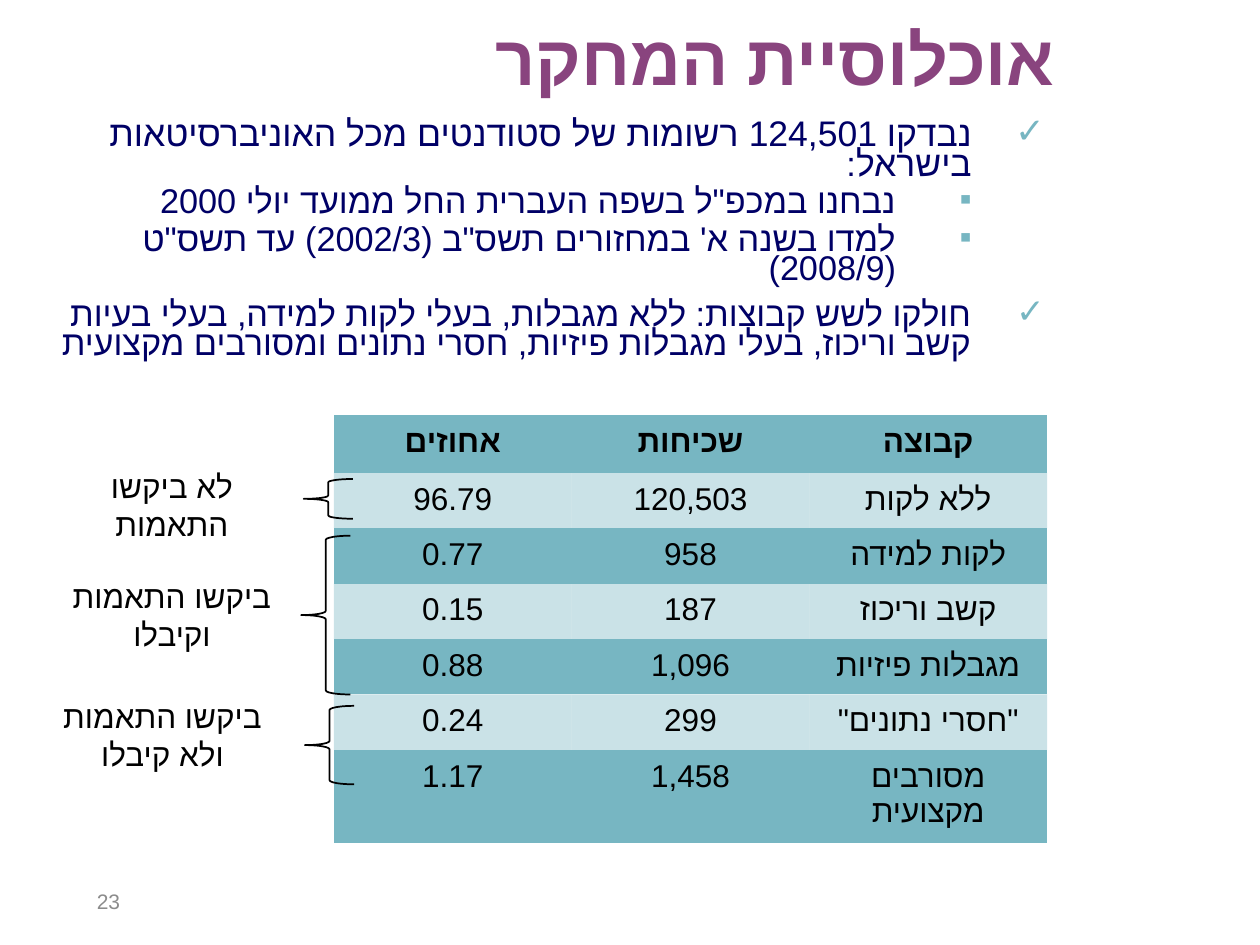
from lxml import etree
from pptx import Presentation
from pptx.dml.color import RGBColor
from pptx.enum.shapes import MSO_SHAPE
from pptx.enum.text import MSO_ANCHOR, PP_ALIGN
from pptx.oxml.ns import qn
from pptx.util import Emu, Inches, Pt

LEFT, CENTER, RIGHT = PP_ALIGN.LEFT, PP_ALIGN.CENTER, PP_ALIGN.RIGHT
TOP, MIDDLE = MSO_ANCHOR.TOP, MSO_ANCHOR.MIDDLE
LEFT_BRACE = MSO_SHAPE.LEFT_BRACE

SLIDE_W, SLIDE_H = Inches(10), Inches(7.5)
COLORS = {
    "title": "89447E",
    "body": "000066",
    "accent": "77B6C2",
    "text": "000000",
    "number": "8C8C8C",
}
HEBREW_FONT = "Arial"
PLAIN_TABLE_STYLE = "{2D5ABB26-0587-4C30-8999-92F81FD0307C}"
BAND_ALPHA = 39

# Outline levels: bullet, text indent, hanging indent, space before
LEVELS = [("✓", 0.58, 0.58, 10), ("▪", 1.18, 0.6, 5)]
BODY = [
    (0, [("נבדקו 124,501 רשומות של סטודנטים מכל האוניברסיטאות בישראל", 20.3),
         (":", 19.6)]),
    (1, [('נבחנו במכפ"ל בשפה העברית החל ממועד יולי 2000', 19.6)]),
    (1, [('למדו בשנה א\' במחזורים תשס"ב (2002/3) עד תשס"ט (2008/9)', 19.6)]),
    (0, [("חולקו לשש קבוצות: ללא מגבלות, בעלי לקות למידה, בעלי בעיות קשב "
          "וריכוז, בעלי מגבלות פיזיות, חסרי נתונים ומסורבים מקצועית", 19.6)]),
]
GROUPS = [
    ("אחוזים", "שכיחות", "קבוצה"),
    ("96.79", "120,503", "ללא לקות"),
    ("0.77", "958", "לקות למידה"),
    ("0.15", "187", "קשב וריכוז"),
    ("0.88", "1,096", "מגבלות פיזיות"),
    ("0.24", "299", '"חסרי נתונים"'),
    ("1.17", "1,458", "מסורבים מקצועית"),
]
# Brace box and label box as shares of the slide, then the label's lines
REQUESTS = [
    ((0.241, 0.507, 0.039, 0.042), (0.038, 0.488, 0.197, 0.053),
     ["לא ביקשו התאמות"]),
    ((0.239, 0.567, 0.039, 0.168), (0.038, 0.604, 0.197, 0.095),
     ["ביקשו התאמות וקיבלו"]),
    ((0.242, 0.747, 0.039, 0.083), (0.022, 0.731, 0.214, 0.095),
     ["ביקשו התאמות", "ולא קיבלו"]),
]


def color(name):
    return RGBColor.from_string(COLORS[name])


def place(x, y, w, h):
    """Turn shares of the slide into lengths."""
    return [Emu(round(share * side)) for share, side in
            zip((x, y, w, h), (SLIDE_W, SLIDE_H, SLIDE_W, SLIDE_H))]


def set_rtl(paragraph, align):
    paragraph.alignment = align
    paragraph._p.get_or_add_pPr().set("rtl", "1")


def add_run(paragraph, text, size, font_name, color_name, bold=False):
    run = paragraph.add_run()
    run.text = text
    run.font.size = Pt(size)
    run.font.name = font_name
    run.font.bold = bold
    run.font.color.rgb = color(color_name)
    properties = run._r.get_or_add_rPr()
    properties.set("lang", "he-IL")
    etree.SubElement(properties, qn("a:cs"), typeface=HEBREW_FONT)


def add_bullet(paragraph, char, indent, hanging):
    properties = paragraph._p.get_or_add_pPr()
    properties.set("marL", str(Inches(indent)))
    properties.set("indent", str(-Inches(hanging)))
    bullet_color = etree.SubElement(properties, qn("a:buClr"))
    etree.SubElement(bullet_color, qn("a:srgbClr"), val=COLORS["accent"])
    etree.SubElement(properties, qn("a:buFont"), typeface=HEBREW_FONT)
    etree.SubElement(properties, qn("a:buChar"), char=char)


def add_text_frame(slide, box, anchor=TOP):
    frame = slide.shapes.add_textbox(*place(*box)).text_frame
    frame.word_wrap = True
    frame.vertical_anchor = anchor
    return frame


def add_lines(slide, box, lines, align, size, font_name, color_name,
              anchor=TOP, bold=False, spacing=None):
    frame = add_text_frame(slide, box, anchor)
    for i, line in enumerate(lines):
        paragraph = frame.add_paragraph() if i else frame.paragraphs[0]
        set_rtl(paragraph, align)
        paragraph.line_spacing = spacing
        add_run(paragraph, line, size, font_name, color_name, bold)


def add_outline(slide, box):
    frame = add_text_frame(slide, box)
    for i, (level, runs) in enumerate(BODY):
        char, indent, hanging, before = LEVELS[level]
        paragraph = frame.add_paragraph() if i else frame.paragraphs[0]
        paragraph.level = level
        set_rtl(paragraph, RIGHT)
        paragraph.line_spacing = 0.7
        paragraph.space_before = Pt(before if i else 0)
        add_bullet(paragraph, char, indent, hanging)
        for text, size in runs:
            add_run(paragraph, text, size, "Arial", "body")


def fill_cell(cell, text, header, light):
    cell.margin_left = cell.margin_right = Inches(0.07)
    cell.margin_top = cell.margin_bottom = Inches(0.07)
    cell.fill.solid()
    cell.fill.fore_color.rgb = color("accent")
    if light:
        tint = cell._tc.tcPr.find(".//" + qn("a:srgbClr"))
        etree.SubElement(tint, qn("a:alpha"), val=str(BAND_ALPHA * 1000))
    paragraph = cell.text_frame.paragraphs[0]
    set_rtl(paragraph, CENTER)
    add_run(paragraph, text, 18, "Calibri", "text", bold=header)


def add_group_table(slide, box):
    table = slide.shapes.add_table(
        len(GROUPS), len(GROUPS[0]), *place(*box)).table
    table._tbl.tblPr.find(qn("a:tableStyleId")).text = PLAIN_TABLE_STYLE
    for r, values in enumerate(GROUPS):
        table.rows[r].height = Inches(0.43 if r else 0.46)
        for c, value in enumerate(values):
            fill_cell(table.cell(r, c), value, header=r == 0, light=r % 2 == 1)


def add_brace(slide, box):
    brace = slide.shapes.add_shape(LEFT_BRACE, *place(*box))
    brace.shadow.inherit = False
    brace.fill.background()
    brace.line.color.rgb = color("text")
    brace.line.width = Pt(1)


def main():
    prs = Presentation()
    prs.slide_width, prs.slide_height = SLIDE_W, SLIDE_H
    slide = prs.slides.add_slide(prs.slide_layouts[6])

    # Title and outline
    add_lines(slide, (0.012, 0, 0.835, 0.133), ["אוכלוסיית המחקר"], RIGHT,
              40, "Comic Neue", "title", MIDDLE, bold=True, spacing=0.9)
    add_outline(slide, (0.024, 0.123, 0.815, 0.244))

    # Group sizes, with the requests bracketed beside them
    add_group_table(slide, (0.265, 0.439, 0.566, 0.405))
    for brace_box, label_box, lines in REQUESTS:
        add_brace(slide, brace_box)
        add_lines(slide, label_box, lines, CENTER, 18, "Calibri", "text")

    # Slide number
    add_lines(slide, (0.067, 0.927, 0.225, 0.053), ["23"], LEFT,
              12, "Calibri", "number", MIDDLE)

    prs.save("out.pptx")


if __name__ == "__main__":
    main()
